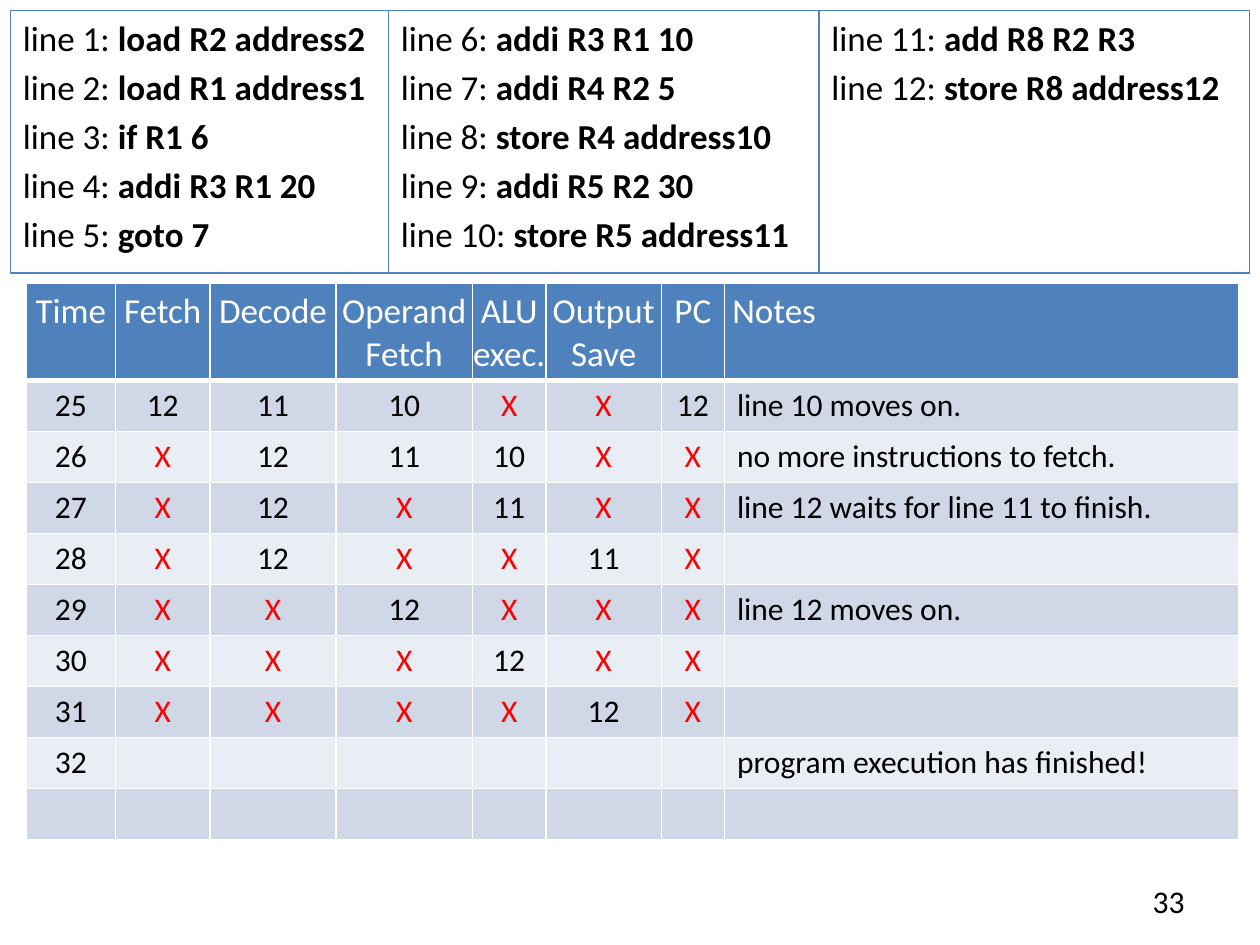
import pptx
import pptx.util
import pptx.dml.color
import pptx.enum.shapes
import pptx.enum.text
import pptx.oxml
import pptx.oxml.ns

COLORS = {"blue": "4F81BD", "band_dark": "D0D8E8", "band_light": "E9EDF4",
          "white": "FFFFFF", "black": "000000", "red": "FF0000"}
FONT = "Calibri"
ALIGN = pptx.enum.text.PP_ALIGN
ANCHOR = pptx.enum.text.MSO_ANCHOR

# Program listing: one list of (line number, instruction) per column
LISTING = [
    [(1, "load R2 address2"), (2, "load R1 address1"), (3, "if R1 6"),
     (4, "addi R3 R1 20"), (5, "goto 7")],
    [(6, "addi R3 R1 10"), (7, "addi R4 R2 5"), (8, "store R4 address10"),
     (9, "addi R5 R2 30"), (10, "store R5 address11")],
    [(11, "add R8 R2 R3"), (12, "store R8 address12")],
]
LISTING_COLUMNS = [36, 41, 41]

# Pipeline trace: stages per time step, then the note
STAGES = ["Time", "Fetch", "Decode", "Operand Fetch", "ALU exec.",
          "Output Save", "PC", " Notes"]
STAGE_COLUMNS = [8.5, 9, 12, 13, 7, 11, 6, 49]
TRACE = [
    ("25 12 11 10 X X 12", "line 10 moves on."),
    ("26 X 12 11 10 X X", "no more instructions to fetch."),
    ("27 X 12 X 11 X X", "line 12 waits for line 11 to finish."),
    ("28 X 12 X X 11 X", ""),
    ("29 X X 12 X X X", "line 12 moves on."),
    ("30 X X X 12 X X", ""),
    ("31 X X X X 12 X", ""),
    ("32", "program execution has finished!"),
    ("", ""),
]


def grid(units):
    """Length of a number of grid units, twelve to the inch."""
    return pptx.util.Inches(units / 12)


def rgb(color):
    return pptx.dml.color.RGBColor.from_string(COLORS[color])


def write(paragraph, text, size=18, color="black", bold=False,
          align=ALIGN.LEFT):
    paragraph.alignment = align
    run = paragraph.add_run()
    run.text = text
    run.font.name = FONT
    run.font.size = pptx.util.Pt(size)
    run.font.bold = bold
    run.font.color.rgb = rgb(color)


def set_borders(cell, color, bottom=1):
    properties = cell._tc.get_or_add_tcPr()
    widths = {"lnL": 1, "lnR": 1, "lnT": 1, "lnB": bottom}
    for position, (side, width) in enumerate(widths.items()):
        properties.insert(position, pptx.oxml.parse_xml(
            f'<a:{side} {pptx.oxml.ns.nsdecls("a")} w="{pptx.util.Pt(width)}">'
            f'<a:solidFill><a:srgbClr val="{COLORS[color]}"/></a:solidFill>'
            f'</a:{side}>'))


def fill_cell(cell, color, bottom=1):
    cell.fill.solid()
    cell.fill.fore_color.rgb = rgb(color)
    set_borders(cell, "white", bottom)


def add_listing(slide, left, top, height):
    for width, instructions in zip(LISTING_COLUMNS, LISTING):
        column = slide.shapes.add_shape(
            pptx.enum.shapes.MSO_SHAPE.RECTANGLE,
            grid(left), grid(top), grid(width), grid(height))
        column.shadow.inherit = False
        column.fill.background()
        column.line.color.rgb = rgb("blue")
        column.line.width = pptx.util.Pt(0.75)
        frame = column.text_frame
        frame.word_wrap = True
        frame.vertical_anchor = ANCHOR.TOP
        for index, (number, instruction) in enumerate(instructions):
            line = frame.add_paragraph() if index else frame.paragraphs[0]
            line.space_before = pptx.util.Pt(4)
            write(line, f"line {number}: ", size=20)
            write(line, instruction, size=20, bold=True)
        left += width


def add_trace(slide, left, top, height, header_height):
    trace = slide.shapes.add_table(
        len(TRACE) + 1, len(STAGES), grid(left), grid(top),
        grid(sum(STAGE_COLUMNS)), grid(height)).table
    for column, width in zip(trace.columns, STAGE_COLUMNS):
        column.width = grid(width)
    for index, row in enumerate(trace.rows):
        row.height = grid((height - header_height) / len(TRACE)
                          if index else header_height)

    notes = len(STAGES) - 1
    aligns = [ALIGN.CENTER] * notes + [ALIGN.LEFT]

    # Header row
    for index, stage in enumerate(STAGES):
        cell = trace.cell(0, index)
        cell.margin_left = cell.margin_right = 0
        fill_cell(cell, "blue", bottom=3)
        write(cell.text_frame.paragraphs[0], stage, size=20, color="white",
              align=aligns[index])

    # Time steps
    for step, (stages, note) in enumerate(TRACE, start=1):
        values = stages.split()
        values += [""] * (notes - len(values)) + [note]
        for index, value in enumerate(values):
            cell = trace.cell(step, index)
            cell.vertical_anchor = ANCHOR.MIDDLE
            fill_cell(cell, "band_dark" if step % 2 else "band_light")
            if value:
                write(cell.text_frame.paragraphs[0], value,
                      color="red" if value == "X" else "black",
                      align=aligns[index])


def add_page_number(slide, left, top, width, height, number):
    page = slide.shapes.add_textbox(
        grid(left), grid(top), grid(width), grid(height)).text_frame
    page.word_wrap = True
    write(page.paragraphs[0], number, align=ALIGN.RIGHT)


def main():
    deck = pptx.Presentation()
    deck.slide_width, deck.slide_height = grid(120), grid(90)
    slide = deck.slides.add_slide(deck.slide_layouts[6])
    add_page_number(slide, left=86, top=83.4, width=28, height=4.8,
                    number="33")
    add_trace(slide, left=2.5, top=27, height=53, header_height=9.25)
    add_listing(slide, left=1, top=1, height=25)
    deck.save("out.pptx")


if __name__ == "__main__":
    main()
